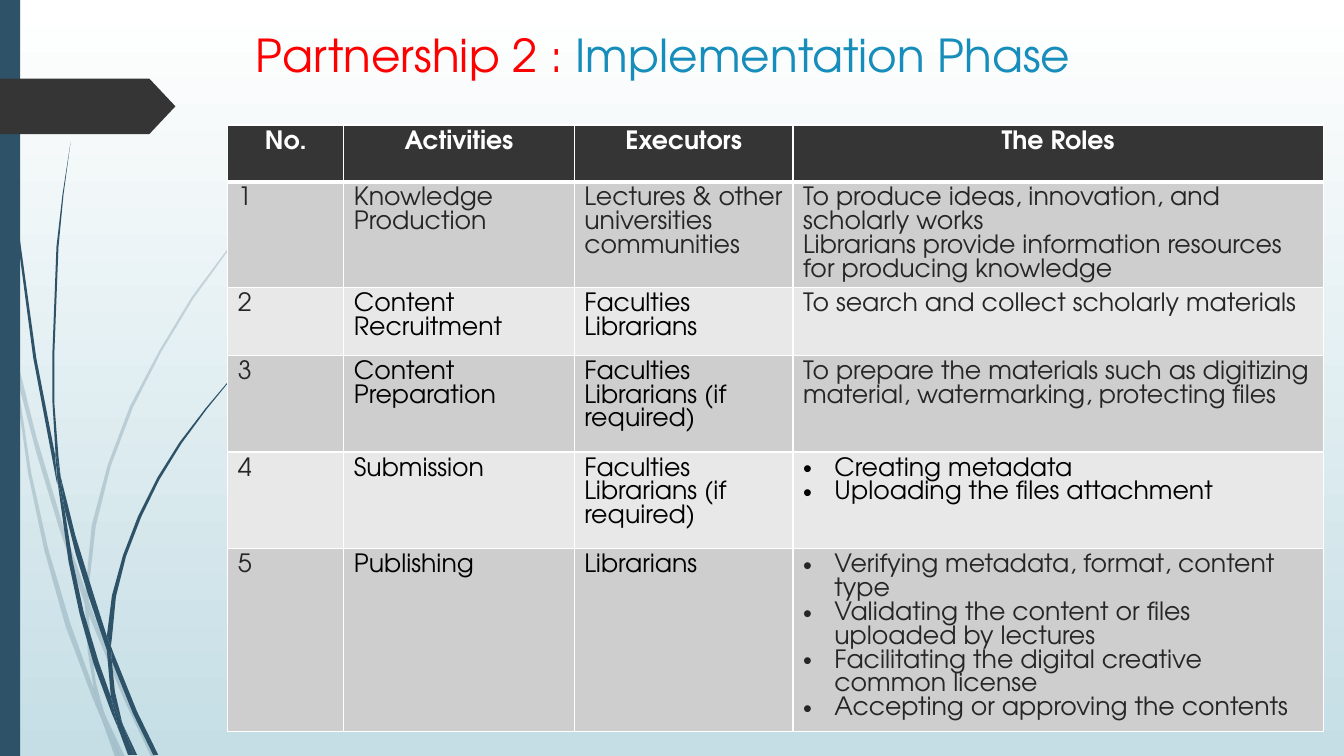
from lxml import etree
from pptx import Presentation
from pptx.dml.color import RGBColor
from pptx.enum.shapes import MSO_SHAPE
from pptx.enum.text import MSO_ANCHOR, PP_ALIGN
from pptx.oxml.ns import qn
from pptx.util import Inches, Pt

RECT, ARROW = MSO_SHAPE.RECTANGLE, MSO_SHAPE.PENTAGON
LEFT, MID, TOP = PP_ALIGN.LEFT, PP_ALIGN.CENTER, MSO_ANCHOR.TOP

# The slide is a grid of 1333 columns by 750 rows.
UNIT = Inches(0.01)
WIDE, HIGH = 1333, 750
FONT = "TeX Gyre Adventor"
HUES = {
    "white": "FFFFFF", "sky": "C5DEE5", "navy": "2E5369", "coal": "353535",
    "red": "FF0000", "blue": "178DBB", "ink": "262626", "black": "000000",
    "odd": "CECECE", "even": "E8E8E8",
}

COLS = [115, 228.6, 217, 526]
ROWS = [56.5, 104, 67.5, 96, 96, 181]
HEAD = ["No.", "Activities", "Executors", "The Roles"]
# Cell text, with one paragraph a line; a leading • makes a bullet.
BODY = [
    ["1", "Knowledge Production", "Lectures & other universities communities",
     "To produce ideas, innovation, and scholarly works\n"
     "Librarians provide information resources for producing knowledge"],
    ["2", "Content Recruitment", "Faculties\nLibrarians",
     "To search and collect scholarly materials"],
    ["3", "Content Preparation", "Faculties\nLibrarians (if required)",
     "To prepare the materials such as digitizing material, "
     "watermarking, protecting files"],
    ["4", "Submission", "Faculties\nLibrarians (if required)",
     "•Creating metadata\n•Uploading the files attachment"],
    ["5", "Publishing", "Librarians",
     "•Verifying metadata, format, content type\n"
     "•Validating the content or files uploaded by lectures\n"
     "•Facilitating the digital creative common license\n"
     "•Accepting or approving the contents"],
]

# Blades of grass: the (column, row) corners of each piece.
PALE = [
    [(11, 350), (9, 322), (0, 282), (0, 299), (10, 344)],
    [(58, 522), (84, 599), (85, 586), (62, 520), (36, 433), (14, 345),
     (17, 376), (36, 449)],
    [(92, 607), (88, 596), (88, 610), (123, 694), (150, 751), (155, 751),
     (127, 692)],
    [(119, 751), (124, 751), (105, 711)],
    [(93, 683), (70, 619), (48, 545), (31, 469), (17, 376), (11, 350),
     (28, 470), (44, 546), (65, 621), (92, 693), (101, 714), (99, 707)],
    [(84, 599), (87, 646), (93, 683), (96, 692), (105, 711), (103, 706),
     (95, 677), (91, 646), (88, 610), (88, 608)],
    [(88, 584), (95, 522), (110, 462), (132, 404), (160, 349), (192, 296),
     (229, 245), (268, 198), (312, 154), (312, 153), (268, 197), (228, 244),
     (190, 295), (158, 348), (129, 403), (107, 461), (91, 521), (85, 584),
     (85, 586), (88, 596)],
    [(101, 714), (114, 751), (119, 751)],
    [(88, 608), (88, 610), (88, 596), (85, 586), (84, 599)],
    [(96, 692), (93, 683), (99, 707), (101, 714), (119, 751), (105, 711)],
]
DARK = [
    [(7, 110), (17, 233), (33, 355), (56, 477), (57, 481), (55, 457),
     (55, 453), (36, 355), (19, 232), (8, 109), (5, 48), (4, 0), (3, 0),
     (4, 48)],
    [(88, 592), (106, 645), (106, 633), (106, 631), (93, 590), (75, 532),
     (60, 472), (64, 505), (75, 549)],
    [(113, 649), (110, 641), (111, 656), (132, 708), (152, 749), (157, 749),
     (136, 706)],
    [(110, 691), (98, 657), (83, 607), (72, 556), (64, 505), (57, 477),
     (68, 557), (79, 609), (93, 659), (111, 708), (117, 722), (116, 717)],
    [(60, 472), (58, 453), (54, 401), (54, 349), (58, 245), (63, 193),
     (70, 141), (62, 193), (56, 245), (52, 349), (52, 399), (55, 449)],
    [(133, 749), (136, 749), (122, 719)],
    [(57, 477), (64, 505), (60, 472), (55, 449), (55, 453)],
    [(111, 633), (115, 592), (125, 552), (140, 513), (158, 476), (180, 440),
     (205, 406), (231, 374), (245, 359), (261, 344), (260, 344), (245, 358),
     (231, 373), (204, 405), (178, 439), (156, 474), (137, 512), (122, 551),
     (111, 591), (106, 631), (110, 641)],
    [(117, 722), (127, 749), (131, 749)],
    [(106, 645), (110, 691), (116, 706), (122, 719), (121, 716), (114, 686),
     (111, 656), (109, 651)],
    [(106, 645), (109, 651), (111, 656), (110, 641), (106, 631), (106, 633)],
    [(116, 706), (110, 691), (116, 717), (117, 722), (130, 749), (133, 749),
     (122, 719)],
]


def tint(name):
    return RGBColor.from_string(HUES[name])


def grid(*cells):
    return [round(c * UNIT) for c in cells]


def style(obj, facts):
    for name, value in facts.items():
        setattr(obj, name, value)


def paint(shape, hue, clear=None):
    """Fill without line or shadow; clear is the opacity in percent."""
    shape.shadow.inherit = False
    shape.fill.solid()
    shape.fill.fore_color.rgb = tint(hue)
    shape.line.fill.background()
    if clear:
        tone = shape.fill._xPr.find(qn("a:solidFill"))[0]
        etree.SubElement(tone, qn("a:alpha"), val=str(clear * 1000))


def blade(slide, spots, clear=None):
    pen = slide.shapes.build_freeform(*spots[0], scale=UNIT)
    pen.add_line_segments(spots[1:], close=True)
    paint(pen.convert_to_shape(), "navy", clear)


def block(slide, kind, box, hue):
    shape = slide.shapes.add_shape(kind, *grid(*box))
    paint(shape, hue)
    return shape


def write(para, text, size, hue, bold=False):
    run = para.add_run()
    run.text = text
    style(run.font, {"name": FONT, "size": Pt(size), "bold": bold})
    run.font.color.rgb = tint(hue)


def title(slide):
    frame = slide.shapes.add_textbox(*grid(244, 22, 999, 52)).text_frame
    style(frame, {"word_wrap": True, "vertical_anchor": TOP})
    para = frame.paragraphs[0]
    para.alignment = LEFT
    write(para, "Partnership 2 : ", 32.4, "red")
    write(para, "Implementation Phase", 32.4, "blue")


def bullet(para):
    props = para._p.get_or_add_pPr()
    props.set("marL", str(31 * UNIT))
    props.set("indent", str(-31 * UNIT))
    etree.SubElement(props, qn("a:buFont"), typeface="Arial")
    etree.SubElement(props, qn("a:buChar"), char="•")


def frame(cell, base):
    """Draw white cell borders, with the bottom one base points wide."""
    props = cell._tc.get_or_add_tcPr()
    for spot, (side, width) in enumerate(
            {"lnL": 1, "lnR": 1, "lnT": 1, "lnB": base}.items()):
        line = etree.Element(qn("a:" + side), w=str(Pt(width)))
        fill = etree.SubElement(line, qn("a:solidFill"))
        etree.SubElement(fill, qn("a:srgbClr"), val=HUES["white"])
        props.insert(spot, line)


def fill(cell, text, back, hue, head):
    cell.fill.solid()
    cell.fill.fore_color.rgb = tint(back)
    frame(cell, 3 if head else 1)
    for spot, line in enumerate(text.split("\n")):
        body = cell.text_frame
        para = body.add_paragraph() if spot else body.paragraphs[0]
        style(para, {"alignment": MID if head else LEFT,
                     "line_spacing": Pt(17)})
        if line.startswith("•"):
            bullet(para)
        write(para, line.lstrip("•"), 18, hue, head)


def shade(row, col):
    if row == 0:
        return "white"
    dark = row > 1 and col in (1, 2) or (row, col) == (4, 3)
    return "black" if dark else "ink"


def table(slide):
    box = grid(226, 124, sum(COLS), sum(ROWS))
    chart = slide.shapes.add_table(len(ROWS), len(COLS), *box).table
    chart.horz_banding = False
    for col, width in zip(chart.columns, grid(*COLS)):
        col.width = width
    for row, height in zip(chart.rows, grid(*ROWS)):
        row.height = height
    for row, texts in enumerate([HEAD, *BODY]):
        back = ("odd" if row % 2 else "even") if row else "coal"
        for col, text in enumerate(texts):
            fill(chart.cell(row, col), text, back, shade(row, col), row == 0)


def sky(slide):
    back = slide.background.fill
    back.gradient()
    back.gradient_angle = 270
    for stop, hue in zip(back.gradient_stops, ("white", "sky")):
        stop.color.rgb = tint(hue)


def main():
    deck = Presentation()
    deck.slide_width, deck.slide_height = grid(WIDE, HIGH)
    slide = deck.slides.add_slide(deck.slide_layouts[6])
    sky(slide)
    for spots in PALE:
        blade(slide, spots, 20)
    for spots in DARK:
        blade(slide, spots)
    block(slide, RECT, (0, 0, 20, HIGH), "navy")
    block(slide, ARROW, (0, 78, 174, 55), "coal").adjustments[0] = 0.47
    title(slide)
    table(slide)
    deck.save("out.pptx")


if __name__ == "__main__":
    main()
